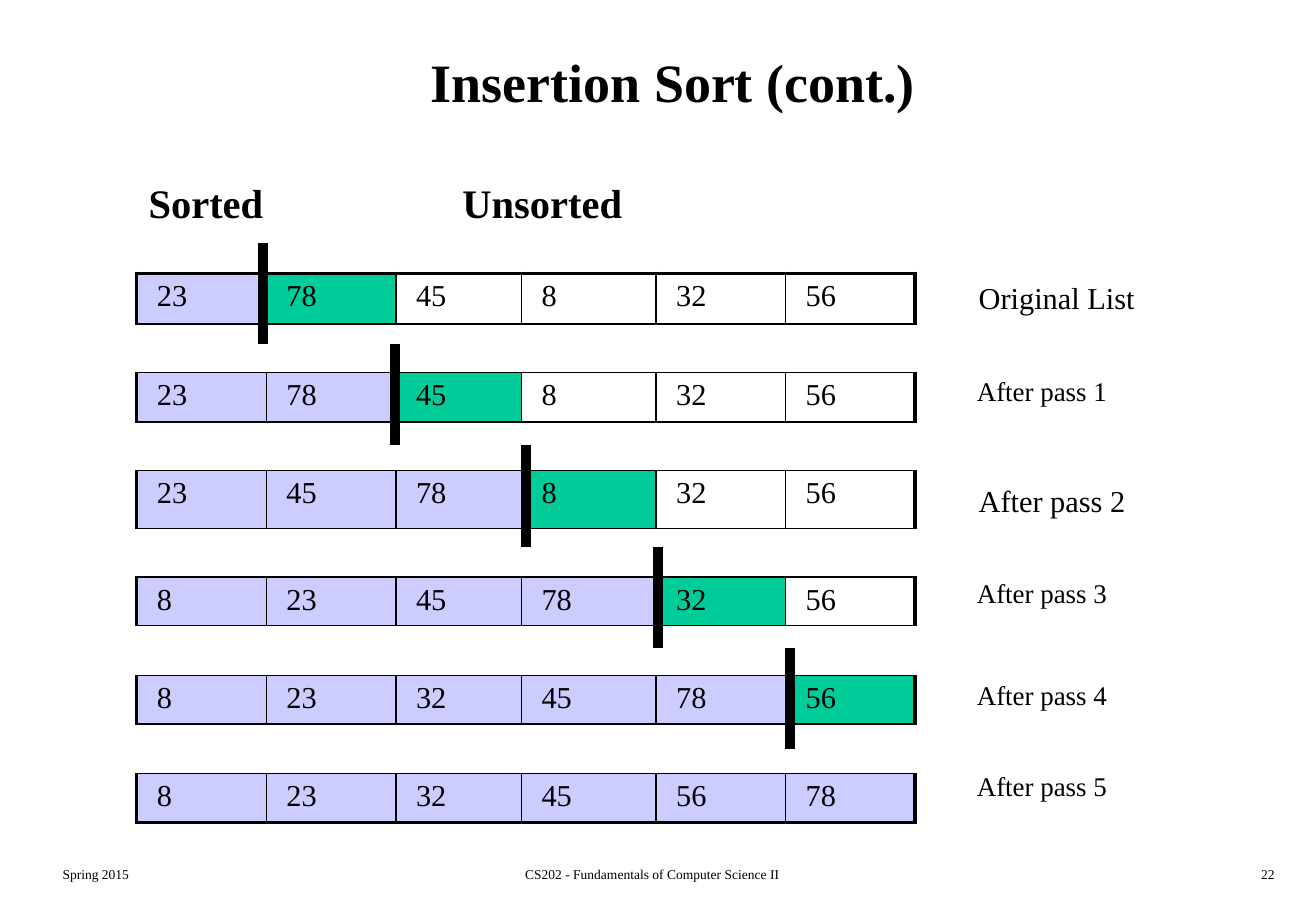
import pptx
import pptx.util
import pptx.dml.color
import pptx.enum.text
import pptx.enum.shapes
import pptx.oxml.ns
import lxml.etree

PX = 7620  # 120 px to the inch
THEME = {
    "font": "Times New Roman",
    "ink": "000000", "done": "CCCCFF", "next": "00CC99",
    "title": 32, "head": 24, "cell": 18, "pass": 16, "foot": 8,
    "thin": 1, "thick": 2.25, "bar": 6,
}
ALIGN = pptx.enum.text.PP_ALIGN
rgb = pptx.dml.color.RGBColor.from_string
qn = pptx.oxml.ns.qn

deck = pptx.Presentation()
deck.slide_width, deck.slide_height = 1300 * PX, 900 * PX
slide = deck.slides.add_slide(deck.slide_layouts[5])


def write(frame, text, size, bold=False, align=ALIGN.LEFT):
    frame.text = text
    frame.word_wrap = True
    para = frame.paragraphs[0]
    para.alignment = align
    font = para.runs[0].font
    font.name, font.bold = THEME["font"], bold
    font.size = pptx.util.Pt(THEME[size])
    font.color.rgb = rgb(THEME["ink"])


def edge(cell, side, width):
    props = cell._tc.get_or_add_tcPr()
    line = lxml.etree.SubElement(props, qn("a:ln" + side))
    if not width:
        lxml.etree.SubElement(line, qn("a:noFill"))
        return
    line.set("w", str(int(pptx.util.Pt(width))))
    fill = lxml.etree.SubElement(line, qn("a:solidFill"))
    lxml.etree.SubElement(fill, qn("a:srgbClr"), val=THEME["ink"])


# Title
title = slide.shapes.title
title.left, title.top, title.width, title.height = [n * PX for n in (50, 20, 1230, 120)]
write(title.text_frame, "Insertion Sort (cont.)", "title", True, ALIGN.CENTER)
title.text_frame.auto_size = pptx.enum.text.MSO_AUTO_SIZE.NONE
title.text_frame.vertical_anchor = pptx.enum.text.MSO_ANCHOR.MIDDLE

# Footer, headings and pass labels
texts = [
    ("Spring 2015", 50, 850, 271, 30, "foot", False, ALIGN.LEFT),
    ("CS202 - Fundamentals of Computer Science II", 401, 850, 487, 30, "foot", False, ALIGN.CENTER),
    ("22", 1000, 850, 271, 30, "foot", False, ALIGN.RIGHT),
    ("Sorted", 135, 170, 190, 60, "head", True, ALIGN.LEFT),
    ("Unsorted", 445, 170, 190, 60, "head", True, ALIGN.LEFT),
    ("Original List", 955, 270, 225, 45, "cell", False, ALIGN.LEFT),
    ("After pass 1", 965, 370, 225, 45, "pass", False, ALIGN.LEFT),
    ("After pass 2", 955, 470, 225, 45, "cell", False, ALIGN.LEFT),
    ("After pass 3", 965, 570, 225, 45, "pass", False, ALIGN.LEFT),
    ("After pass 4", 965, 670, 225, 45, "pass", False, ALIGN.LEFT),
    ("After pass 5", 965, 760, 225, 45, "pass", False, ALIGN.LEFT),
]
for text, left, top, wide, high, size, bold, align in texts:
    box = slide.shapes.add_textbox(left * PX, top * PX, wide * PX, high * PX)
    write(box.text_frame, text, size, bold, align)
    if size == "pass":
        frame = box.text_frame
        frame.margin_left = frame.margin_top = frame.margin_right = frame.margin_bottom = 0

# Table: one list row per pass, with empty rows between
nums = [23, 78, 45, 8, 32, 56]
cols = [128, 128, 124, 133, 128, 128]
rows = [50, 46, 49, 48, 57, 48, 48, 49, 48, 49, 46]
shape = slide.shapes.add_table(len(rows), len(cols), 135 * PX, 270 * PX,
                               sum(cols) * PX, sum(rows) * PX)
table = shape.table
table.first_row = table.horz_banding = False
style = table._tbl.tblPr.find(qn("a:tableStyleId"))
style.text = "{2D5ABB26-0587-4C30-8999-92F81FD0307C}"
for col, wide in zip(table.columns, cols):
    col.width = wide * PX
for row, high in zip(table.rows, rows):
    row.height = high * PX

thin, thick = THEME["thin"], THEME["thick"]
for r in range(len(rows)):
    gap = r % 2 == 1
    count = r // 2 + 1
    state = sorted(nums[:count]) + nums[count:]
    for c, num in enumerate(state):
        cell = table.cell(r, c)
        edge(cell, "L", 0 if gap else thick if c == 0 else thin)
        edge(cell, "R", 0 if gap else thick if c == len(cols) - 1 else thin)
        edge(cell, "T", thick if r == 0 else thin)
        edge(cell, "B", thick if r == len(rows) - 1 else thin)
        if gap or c > count:
            cell.fill.background()
        else:
            cell.fill.solid()
            cell.fill.fore_color.rgb = rgb(THEME["done" if c < count else "next"])
        if not gap:
            cell.margin_left, cell.margin_right = 20 * PX, 12 * PX
            cell.margin_top = cell.margin_bottom = 6 * PX
            write(cell.text_frame, str(num), "cell")

# Bars between the sorted and unsorted parts
for i in range(5):
    x, y = (260 + 130 * i) * PX, (240 + 100 * i) * PX
    bar = slide.shapes.add_connector(pptx.enum.shapes.MSO_CONNECTOR.STRAIGHT, x, y, x, y + 100 * PX)
    bar.line.color.rgb = rgb(THEME["ink"])
    bar.line.width = pptx.util.Pt(THEME["bar"])
    lxml.etree.SubElement(bar._element.spPr, qn("a:effectLst"))

deck.save("out.pptx")
